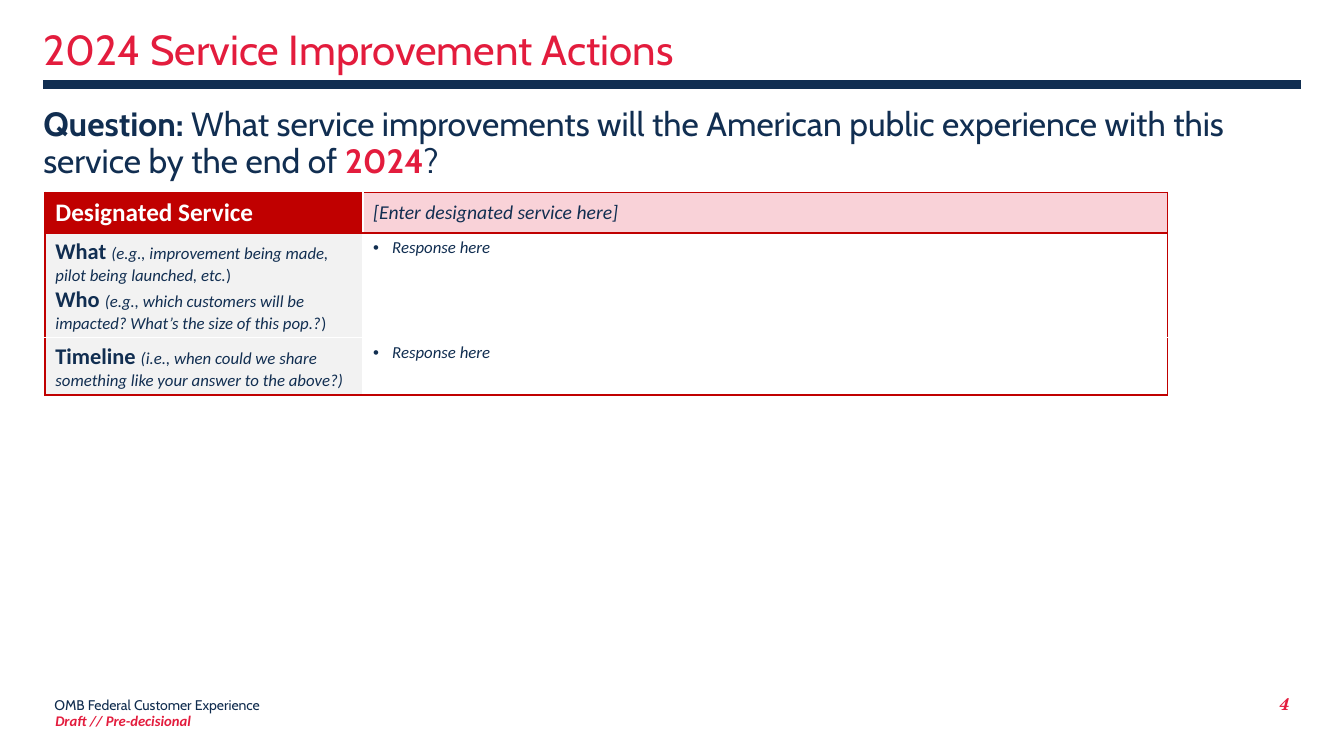
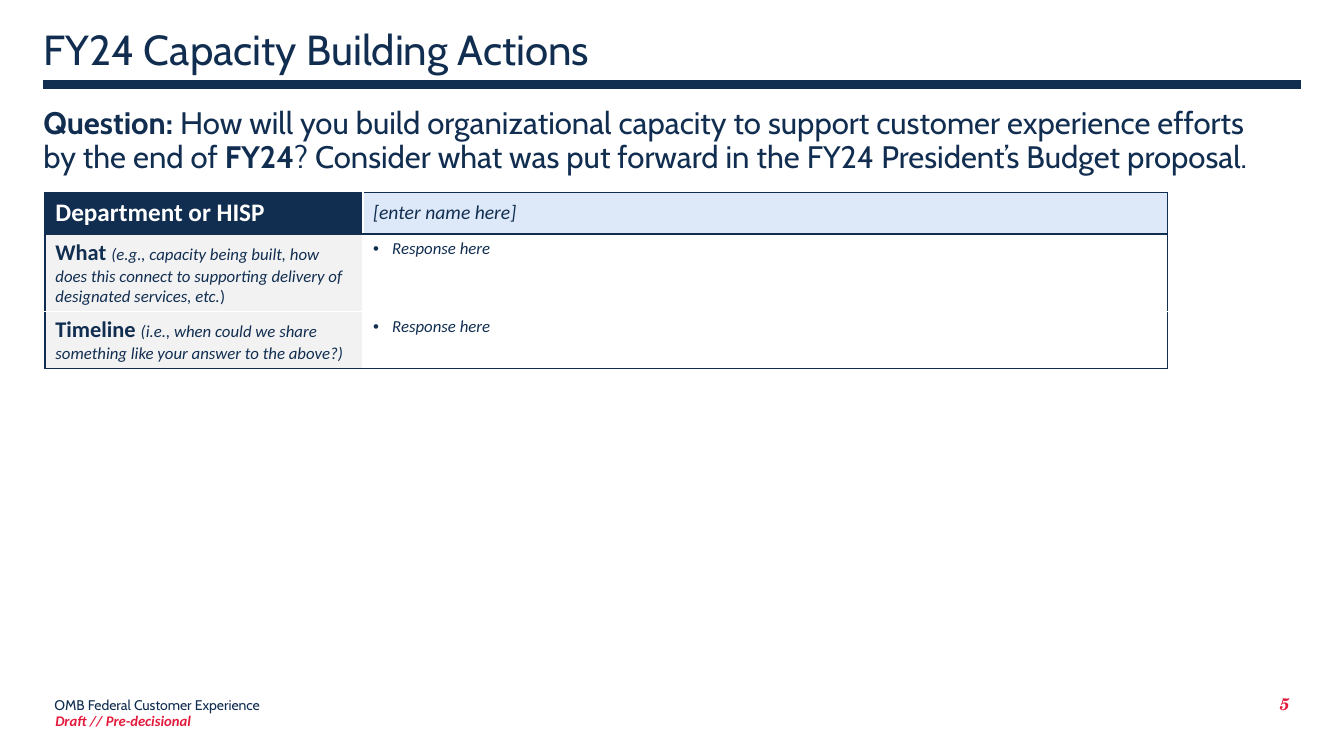
import pptx
import pptx.util
import pptx.dml.color
import pptx.enum.shapes
import pptx.enum.text
import pptx.oxml
import lxml.etree

Inches = pptx.util.Inches
Pt = pptx.util.Pt
ANCHOR = pptx.enum.text.MSO_ANCHOR
ALIGN = pptx.enum.text.PP_ALIGN
NS = "http://schemas.openxmlformats.org/drawingml/2006/main"

NAVY, RED, WHITE, GREY = "112E51", "E31C3D", "FFFFFF", "F2F2F2"
HEAD, BODY, DIGIT = "Cabin", "Calibri", "TeX Gyre Schola"
TIME = [("Timeline ", 16, "b"),
        ("(i.e., when could we share something like your answer to the above?)", 12, "i")]

PAGES = [
    dict(
        num="4", title="2024 Service Improvement Actions", hue=RED,
        wide=12.47, size=24,
        ask=[("Question:", "b", NAVY),
             (" What service improvements will the American public experience "
              "with this service by the end of ", "", NAVY),
             ("2024", "b", RED), ("?", "", NAVY)],
        main="C00000", tint="F9D2D8", rows=[0.4, 1.04, 0.57],
        label="Designated Service", entry="[Enter designated service here]",
        what=[[("What ", 16, "b"),
               ("(e.g., improvement being made, pilot being launched, etc.", 12, "i"),
               (")", 12, "")],
              [("Who ", 16, "b"),
               ("(e.g., which customers will be impacted? What’s the size of this pop.?", 12, "i"),
               (")", 12, "")]],
    ),
    dict(
        num="5", title="FY24 Capacity Building Actions", hue=NAVY,
        wide=12.75, size=22.2,
        ask=[("Question:", "b", NAVY),
             (" How will you build organizational capacity to support "
              "customer experience efforts", "", NAVY),
             ("\n", "", NAVY), ("by the end of ", "", NAVY), ("FY24", "b", NAVY),
             ("? Consider what was put forward in the FY24 President’s "
              "Budget proposal.", "", NAVY)],
        main=NAVY, tint="DDE9F8", rows=[0.41, 0.77, 0.56],
        label="Department or HISP", entry="[enter name here]",
        what=[[("What ", 16, "b"),
               ("(e.g., capacity being built, how does this connect to supporting "
                "delivery of designated services, etc.", 12, "i"),
               (")", 12, "")]],
    ),
]


def rgb(code):
    return pptx.dml.color.RGBColor.from_string(code)


def write(para, runs, font):
    """Add runs of (text, size, style, colour); style holds b and/or i."""
    for text, size, style, hue in runs:
        if text == "\n":
            para.add_line_break()
            continue
        run = para.add_run()
        run.text = text
        run.font.name = font
        run.font.size = Pt(size)
        run.font.bold = "b" in style
        run.font.italic = "i" in style
        run.font.color.rgb = rgb(hue)


deck = pptx.Presentation()
deck.slide_width = Inches(13.33)
deck.slide_height = Inches(7.5)

for page in PAGES:
    slide = deck.slides.add_slide(deck.slide_layouts[6])

    # Rule under the title
    rule = slide.shapes.add_connector(
        pptx.enum.shapes.MSO_CONNECTOR.STRAIGHT,
        Inches(0.43), Inches(0.84), Inches(12.9), Inches(0.84))
    rule.line.color.rgb = rgb(NAVY)
    rule.line.width = Pt(6)
    lxml.etree.SubElement(rule.line._get_or_add_ln().getparent(), f"{{{NS}}}effectLst")

    # Text boxes: place, insets, anchor, font, runs
    ask = [(text, page["size"], style, hue) for text, style, hue in page["ask"]]
    none = (0, 0, 0, 0)
    boxes = [
        ((0.54, 6.72, 3.56, 0.36), none, ANCHOR.BOTTOM, HEAD,
         [("OMB Federal Customer Experience", 10, "", "102C4E")]),
        ((0.45, 7.01, 2.18, 0.29), (0.1, 0.05, 0.1, 0.05), ANCHOR.TOP, BODY,
         [("Draft // Pre-decisional", 10.5, "bi", RED)]),
        ((9.79, 6.85, 3, 0.23), none, ANCHOR.BOTTOM, DIGIT,
         [(page["num"], 12, "bi", RED)]),
        ((0.43, 1.07, page["wide"], 0.8), none, ANCHOR.TOP, HEAD, ask),
        ((0.43, -0.26, 7.04, 1.1), (0, 0, 0, 0.1), ANCHOR.BOTTOM, HEAD,
         [(page["title"], 30, "", page["hue"])]),
    ]
    for place, inset, anchor, font, runs in boxes:
        frame = slide.shapes.add_textbox(*map(Inches, place)).text_frame
        frame.word_wrap = True
        frame.vertical_anchor = anchor
        (frame.margin_left, frame.margin_top,
         frame.margin_right, frame.margin_bottom) = map(Inches, inset)
        para = frame.paragraphs[0]
        write(para, runs, font)
        if font == DIGIT:
            para.alignment = ALIGN.RIGHT
        if runs[0][1] > 20:
            para.line_spacing = 0.9
            para.space_before = Pt(10)

    # Table
    table = slide.shapes.add_table(
        3, 2, Inches(0.45), Inches(1.91), Inches(11.13), Inches(sum(page["rows"]))).table
    for col, wide in zip(table.columns, (3.15, 7.98)):
        col.width = Inches(wide)
    for row, high in zip(table.rows, page["rows"]):
        row.height = Inches(high)

    reply = [[("Response here", 12, "i")]]
    grid = [
        [[[(page["label"], 18, "b")]], [[(page["entry"], 14, "i")]]],
        [page["what"], reply],
        [[TIME], reply],
    ]
    fills = [(page["main"], page["tint"]), (GREY, WHITE), (GREY, WHITE)]
    for r, row in enumerate(grid):
        for c, paras in enumerate(row):
            cell = table.cell(r, c)
            props = cell._tc.get_or_add_tcPr()
            strong = {"lnL": c == 0, "lnR": c == 1, "lnT": r < 2, "lnB": r != 1}
            for tag, outer in strong.items():
                hue, wide = (page["main"], 1.5) if outer else (WHITE, 1)
                props.append(pptx.oxml.parse_xml(
                    f'<a:{tag} xmlns:a="{NS}" w="{Pt(wide)}"><a:solidFill>'
                    f'<a:srgbClr val="{hue}"/></a:solidFill></a:{tag}>'))
            cell.fill.solid()
            cell.fill.fore_color.rgb = rgb(fills[r][c])
            if (r, c) == (0, 1):
                cell.vertical_anchor = ANCHOR.MIDDLE
            ink = WHITE if (r, c) == (0, 0) else NAVY
            frame = cell.text_frame
            for n, runs in enumerate(paras):
                para = frame.add_paragraph() if n else frame.paragraphs[0]
                write(para, [(*run, ink) for run in runs], BODY)
                if r and c:
                    mark = para._p.get_or_add_pPr()
                    mark.set("marL", str(Inches(0.19)))
                    mark.set("indent", str(-Inches(0.19)))
                    lxml.etree.SubElement(mark, f"{{{NS}}}buFont", typeface="Arial")
                    lxml.etree.SubElement(mark, f"{{{NS}}}buChar", char="•")

deck.save("out.pptx")
